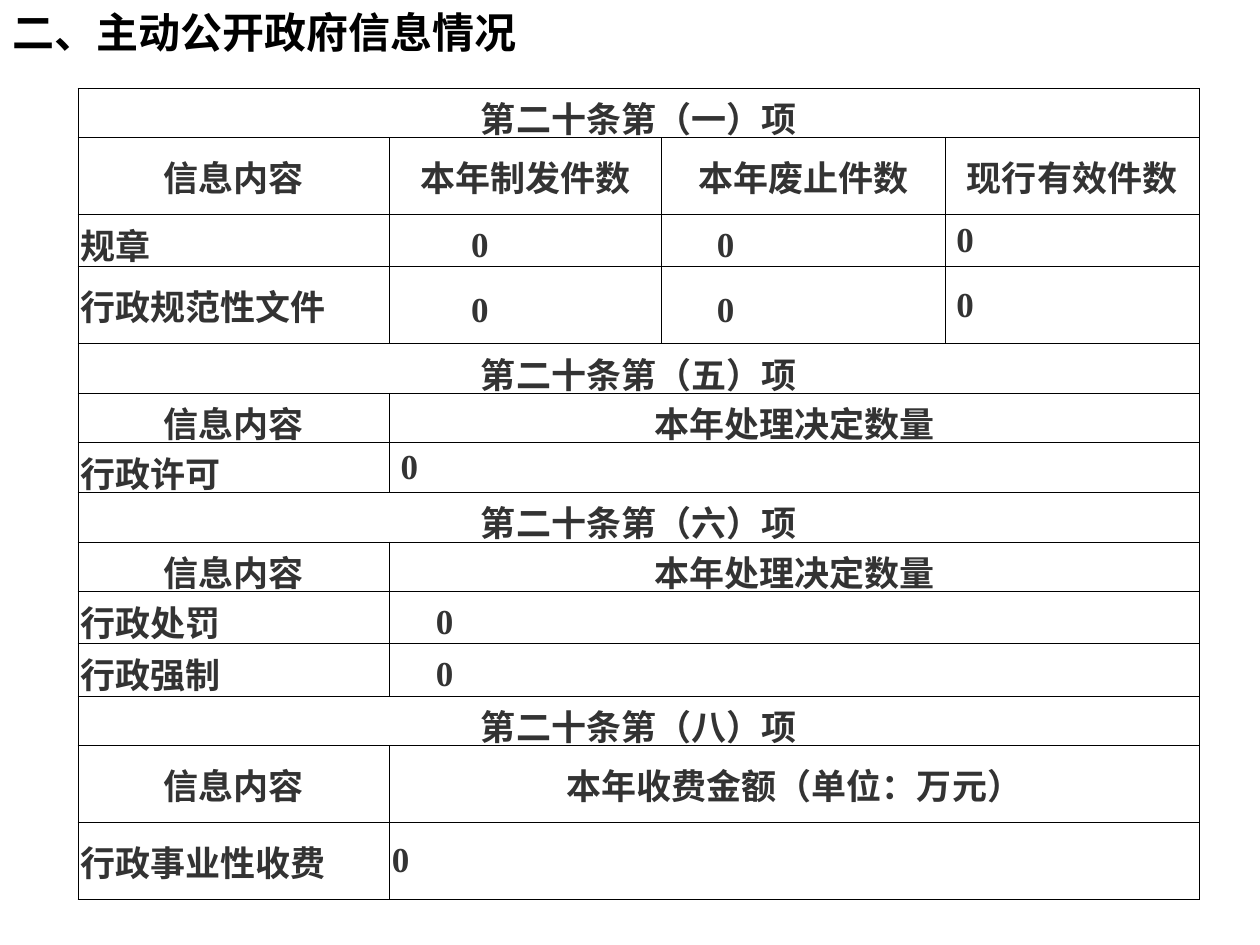
import pptx
import pptx.util
import pptx.dml.color
import pptx.enum.text
import pptx.oxml
import pptx.oxml.ns

Inches = pptx.util.Inches
Pt = pptx.util.Pt
PP_ALIGN = pptx.enum.text.PP_ALIGN
MSO_ANCHOR = pptx.enum.text.MSO_ANCHOR

COLORS = {"title": "000000", "text": "333333", "fill": "FFFFFF", "border": "000000"}
CJK = "Noto Sans CJK SC"
SERIF = "Times New Roman"

COL_WIDTHS = [2.47, 2.16, 2.25, 2.02]
SHORT, TALL = 0.36, 0.61

# Zero values: left indent in inches and whether the figure sits low in its cell
WIDE, MEDIUM, SMALL = (0.63, True), (0.42, True), (0.07, False)
LOW, FLUSH = (0.35, True), (0, False)

# Each row: height, then its cells; the last cell spans the remaining columns.
# A string is a label, a tuple is a zero value.
ROWS = [
    (SHORT, ["第二十条第（一）项"]),
    (TALL, ["信息内容", "本年制发件数", "本年废止件数", "现行有效件数"]),
    (SHORT, ["规章", WIDE, MEDIUM, SMALL]),
    (TALL, ["行政规范性文件", WIDE, MEDIUM, SMALL]),
    (SHORT, ["第二十条第（五）项"]),
    (SHORT, ["信息内容", "本年处理决定数量"]),
    (SHORT, ["行政许可", SMALL]),
    (SHORT, ["第二十条第（六）项"]),
    (SHORT, ["信息内容", "本年处理决定数量"]),
    (SHORT, ["行政处罚", LOW]),
    (SHORT, ["行政强制", LOW]),
    (SHORT, ["第二十条第（八）项"]),
    (TALL, ["信息内容", "本年收费金额（单位：万元）"]),
    (TALL, ["行政事业性收费", FLUSH]),
]


def rgb(name):
    return pptx.dml.color.RGBColor.from_string(COLORS[name])


def add_run(p, text, size, font, color):
    r = p.add_run()
    r.text = text
    r.font.size = Pt(size)
    r.font.bold = True
    r.font.name = font
    r.font.color.rgb = rgb(color)
    ea = pptx.oxml.parse_xml(
        f'<a:ea {pptx.oxml.ns.nsdecls("a")} typeface="{CJK}"/>')
    r.font._element.find(pptx.oxml.ns.qn("a:latin")).addnext(ea)


def add_title(s, text):
    sp = s.shapes.title
    sp.left, sp.top = Inches(0), Inches(0)
    sp.width, sp.height = Inches(4.26), Inches(0.5)
    tf = sp.text_frame
    tf.word_wrap = False
    tf.auto_size = pptx.enum.text.MSO_AUTO_SIZE.SHAPE_TO_FIT_TEXT
    tf.vertical_anchor = MSO_ANCHOR.TOP
    p = tf.paragraphs[0]
    p.alignment = PP_ALIGN.LEFT
    add_run(p, text, 24, "Calibri", "title")


def set_borders(cell):
    tcPr = cell._tc.get_or_add_tcPr()
    for i, side in enumerate(("lnL", "lnR", "lnT", "lnB")):
        tcPr.insert(i, pptx.oxml.parse_xml(
            f'<a:{side} {pptx.oxml.ns.nsdecls("a")} w="{Pt(0.5)}"><a:solidFill>'
            f'<a:srgbClr val="{COLORS["border"]}"/></a:solidFill></a:{side}>'))


def style_cell(cell):
    cell.fill.solid()
    cell.fill.fore_color.rgb = rgb("fill")
    cell.vertical_anchor = MSO_ANCHOR.MIDDLE
    cell.margin_left = cell.margin_right = Inches(0.02)
    cell.margin_top = cell.margin_bottom = Inches(0.03)
    set_borders(cell)


def fill_label(cell, text, centred):
    p = cell.text_frame.paragraphs[0]
    p.alignment = PP_ALIGN.CENTER if centred else PP_ALIGN.LEFT
    add_run(p, text, 20, CJK, "text")


def fill_zero(cell, indent, low):
    cell.margin_left = Inches(0.02 + indent)
    if low:
        cell.margin_top, cell.margin_bottom = Inches(0.08), Inches(0)
    p = cell.text_frame.paragraphs[0]
    p.alignment = PP_ALIGN.LEFT
    add_run(p, "0", 20, SERIF, "text")


def add_info_table(s):
    n_cols = len(COL_WIDTHS)
    frame = s.shapes.add_table(len(ROWS), n_cols, Inches(0.62), Inches(0.7),
                               Inches(sum(COL_WIDTHS)), Inches(6.44))
    table = frame.table
    table.first_row = table.horz_banding = False
    for col, width in zip(table.columns, COL_WIDTHS):
        col.width = Inches(width)

    for i, (height, items) in enumerate(ROWS):
        table.rows[i].height = Inches(height)
        for j in range(n_cols):
            style_cell(table.cell(i, j))
        last = len(items) - 1
        if last < n_cols - 1:
            table.cell(i, last).merge(table.cell(i, n_cols - 1))
        # Rows of labels only are headings and are centred
        heading = all(isinstance(item, str) for item in items)
        for j, item in enumerate(items):
            if isinstance(item, str):
                fill_label(table.cell(i, j), item, heading)
            else:
                fill_zero(table.cell(i, j), *item)
    frame.height = Inches(6.44)


def main():
    prs = pptx.Presentation()
    prs.slide_width, prs.slide_height = Inches(10), Inches(7.5)
    s = prs.slides.add_slide(prs.slide_layouts[5])
    add_title(s, "二、主动公开政府信息情况")
    add_info_table(s)
    prs.save("out.pptx")


if __name__ == "__main__":
    main()
